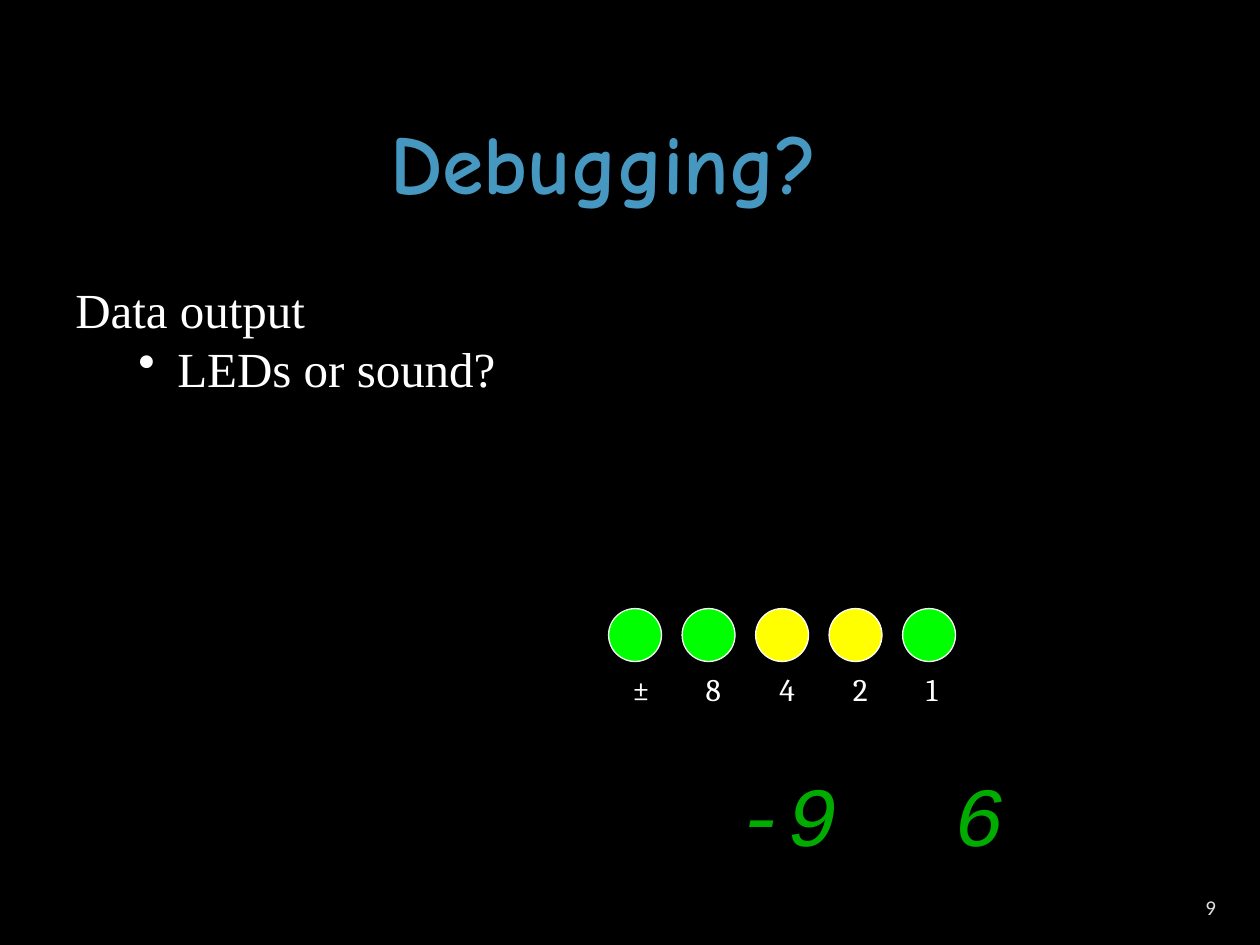
"""Builds the slide on debugging with LEDs and a numeric readout."""
from lxml.etree import SubElement
from pptx import Presentation
from pptx.dml.color import RGBColor
from pptx.enum.shapes import MSO_SHAPE as Shape
from pptx.enum.text import MSO_ANCHOR as Anchor, PP_ALIGN as Align
from pptx.oxml.ns import qn
from pptx.util import Inches, Pt

BLACK = RGBColor(0x00, 0x00, 0x00)
WHITE = RGBColor(0xFF, 0xFF, 0xFF)
PALE_GREY = RGBColor(0xE0, 0xE0, 0xE0)
BLUE = RGBColor(0x47, 0x98, 0xC0)
LIT = RGBColor(0x00, 0xFF, 0x00)
UNLIT = RGBColor(0xFF, 0xFF, 0x00)
DIGIT_GREEN = RGBColor(0x00, 0xAC, 0x00)

TITLE = "Debugging?"
BODY = ["Data output", "LEDs or sound?"]
LEDS = [("±", LIT), ("8", LIT), ("4", UNLIT), ("2", UNLIT), ("1", LIT)]
READOUT = [("-9", 5.75, 1), ("6", 7.48, 0.6)]
PAGE_NUMBER = "9"

LED_LEFT, LED_TOP, LED_SIZE = 4.83, 4.83, 0.42
LED_PITCH = 7 / 12
LABEL_SHIFT, LABEL_TOP = 0.09, 5.27


def add_text(page, lines, area, font_name, size, color, bold=False, italic=False):
    box = page.shapes.add_textbox(*map(Inches, area))
    frame = box.text_frame
    frame.word_wrap = False
    frame.text = "\n".join(lines)
    for para in frame.paragraphs:
        font = para.font
        font.name, font.size = font_name, Pt(size)
        font.bold, font.italic = bold, italic
        font.color.rgb = color
    return frame


def add_bullet(para, margin, indent):
    para.level = 1
    properties = para._p.get_or_add_pPr()
    properties.set("marL", str(Inches(margin)))
    properties.set("indent", str(Inches(indent)))
    bullet = SubElement(properties, qn("a:buChar"), char="•")
    properties.remove(bullet)
    properties.insert(0, bullet)


def add_led(page, left, label, color):
    led = page.shapes.add_shape(
        Shape.OVAL, *map(Inches, (left, LED_TOP, LED_SIZE, LED_SIZE)))
    led.shadow.inherit = False
    led.fill.solid()
    led.fill.fore_color.rgb = color
    led.line.color.rgb = WHITE
    led.line.width = Pt(0.75)
    add_text(page, [label], (left + LABEL_SHIFT, LABEL_TOP, 0.34, 0.4),
             "Cambria", 18, WHITE)


def main():
    deck = Presentation()
    deck.slide_width, deck.slide_height = Inches(10), Inches(7.5)
    page = deck.slides.add_slide(deck.slide_layouts[6])
    page.background.fill.solid()
    page.background.fill.fore_color.rgb = BLACK

    add_text(page, [TITLE], (3, 0.83, 3.72, 0.9), "Comic Neue", 48, BLUE, bold=True)
    body = add_text(page, BODY, (0.5, 2.17, 3.54, 1.03), "Times New Roman", 28, WHITE)
    add_bullet(body.paragraphs[1], 0.81, -0.31)

    for column, (label, color) in enumerate(LEDS):
        add_led(page, LED_LEFT + column * LED_PITCH, label, color)
    for digits, left, width in READOUT:
        add_text(page, [digits], (left, 6, width, 0.9), "Courier New", 48,
                 DIGIT_GREEN, italic=True)

    number = add_text(page, [PAGE_NUMBER], (7.42, 7, 2.33, 0.4), "Calibri", 12, PALE_GREY)
    number.word_wrap = True
    number.vertical_anchor = Anchor.MIDDLE
    number.paragraphs[0].alignment = Align.RIGHT

    deck.save("out.pptx")


if __name__ == "__main__":
    main()
